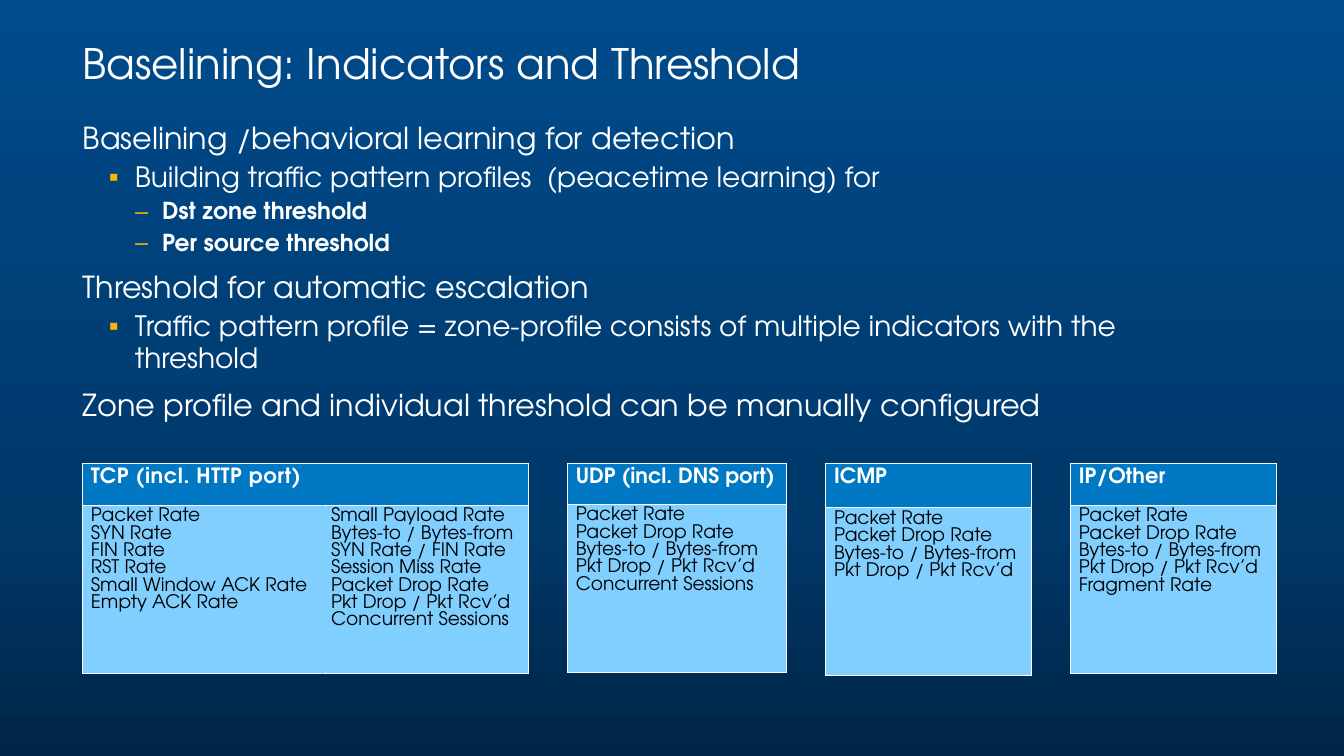
from copy import deepcopy
from lxml.etree import SubElement
from pptx import Presentation
from pptx.dml.color import RGBColor
from pptx.enum.shapes import MSO_SHAPE
from pptx.enum.text import MSO_ANCHOR
from pptx.oxml.ns import qn
from pptx.util import Cm, Pt

FONT = "TeX Gyre Adventor"
HUE = {"text": "FFFFFF", "ink": "000000", "head": "0078C3", "cell": "81CFFF", "mark": "FAB900"}
SKY = [(0, "004B8C"), (0.7, "003869"), (1, "002546")]
TITLE = "Baselining: Indicators and Threshold"
BODY = [
    (0, "Baselining /behavioral learning for detection"),
    (1, "Building traffic pattern profiles  (peacetime learning) for"),
    (2, "Dst zone threshold"),
    (2, "Per source threshold"),
    (0, "Threshold for automatic escalation"),
    (1, "Traffic pattern profile = zone-profile consists of multiple indicators with the threshold"),
    (0, "Zone profile and individual threshold can be manually configured"),
]
LEVELS = [
    {"size": 26, "before": 12, "left": 0.32},
    {"size": 24, "before": 5, "left": 1.9, "hang": 0.79, "mark": "▪"},
    {"size": 20, "before": 4, "left": 2.72, "hang": 0.81, "mark": "–", "bold": True},
]
TABLES = [
    {"head": "TCP (incl. HTTP port)", "high": 1.27, "wide": [7.26, 6.22], "track": 50, "cols": [
        ["Packet Rate", "SYN Rate", "FIN Rate", "RST Rate", "Small Window ACK Rate",
         "Empty ACK Rate"],
        ["Small Payload Rate", "Bytes-to / Bytes-from", "SYN Rate / FIN Rate",
         "Session Miss Rate", "Packet Drop Rate", "Pkt Drop / Pkt Rcv’d",
         "Concurrent Sessions"]]},
    {"head": "UDP (incl. DNS port)", "high": 1.24, "wide": [6.63], "cols": [
        ["Packet Rate", "Packet Drop Rate", "Bytes-to / Bytes-from",
         "Pkt Drop / Pkt Rcv’d", "Concurrent Sessions"]]},
    {"head": "ICMP", "high": 1.35, "wide": [6.22], "cols": [
        ["Packet Rate", "Packet Drop Rate", "Bytes-to / Bytes-from",
         "Pkt Drop / Pkt Rcv’d"]]},
    {"head": "IP/Other", "high": 1.27, "wide": [6.22], "cols": [
        ["Packet Rate", "Packet Drop Rate", "Bytes-to / Bytes-from",
         "Pkt Drop / Pkt Rcv’d", "Fragment Rate"]]},
]
WIDE, HIGH = 40.64, 22.86
LEFT, TOP, GAP, DEEP = 2.5, 14.01, 1.18, 5.08


def write(frame, text, new=False, size=16, color="text", bold=False, space=0.95,
          before=0, after=0, left=0, hang=0, mark=None, track=0):
    par = frame.add_paragraph() if new else frame.paragraphs[0]
    par.line_spacing, par.space_before, par.space_after = space, Pt(before), Pt(after)
    run = par.add_run()
    run.text = text
    run.font.name, run.font.size, run.font.bold = FONT, Pt(size), bold
    run.font.color.rgb = RGBColor.from_string(HUE[color])
    if track:
        run.font._element.set("spc", str(track))
    props = par._p.get_or_add_pPr()
    props.set("marL", str(Cm(left)))
    props.set("indent", str(-Cm(hang)))
    if mark:
        tint = SubElement(props, qn("a:buClr"))
        SubElement(tint, qn("a:srgbClr"), val=HUE["mark"])
        SubElement(props, qn("a:buFont"), typeface="Arial")
        SubElement(props, qn("a:buChar"), char=mark)


def box(slide, *place):
    frame = slide.shapes.add_textbox(*map(Cm, place)).text_frame
    frame.word_wrap = True
    frame.margin_left = frame.margin_right = frame.margin_top = frame.margin_bottom = 0
    return frame


def style(cell, fill, pad, soft=""):
    cell.margin_left = cell.margin_right = Cm(0.25)
    cell.margin_top = cell.margin_bottom = Cm(pad)
    props = cell._tc.get_or_add_tcPr()
    for side in "LRTB":
        line = SubElement(props, qn("a:ln" + side), w=str(Pt(1)))
        paint = SubElement(line, qn("a:solidFill"))
        SubElement(paint, qn("a:srgbClr"), val=HUE["cell" if side == soft else "text"])
    cell.fill.solid()
    cell.fill.fore_color.rgb = RGBColor.from_string(HUE[fill])


def grid(slide, left, data):
    wide, cols = data["wide"], data["cols"]
    table = slide.shapes.add_table(2, len(cols), Cm(left), Cm(TOP), Cm(sum(wide)),
                                   Cm(data["high"] + DEEP)).table
    table.first_row = table.horz_banding = False
    table.rows[0].height, table.rows[1].height = Cm(data["high"]), Cm(DEEP)
    for col, lines in enumerate(cols):
        table.columns[col].width = Cm(wide[col])
        style(table.cell(0, col), "head", 0.15)
        cell = table.cell(1, col)
        style(cell, "cell", 0.08, "RL"[col] if len(cols) > 1 else "")
        for row, text in enumerate(lines):
            write(cell.text_frame, text, new=row > 0, color="ink", space=1.0)
    if len(cols) > 1:
        table.cell(0, 0).merge(table.cell(0, len(cols) - 1))
    write(table.cell(0, 0).text_frame, data["head"], size=18, bold=True, space=1.0,
          track=data.get("track", 0))


def paint(slide):
    sky = slide.shapes.add_shape(MSO_SHAPE.RECTANGLE, 0, 0, Cm(WIDE), Cm(HIGH))
    sky.shadow.inherit = False
    sky.line.fill.background()
    fill = sky.fill
    fill.gradient()
    fill.gradient_angle = 270
    first = fill.gradient_stops[0]._gs
    first.addnext(deepcopy(first))
    for stop, (spot, tone) in zip(fill.gradient_stops, SKY):
        stop.position = spot
        stop.color.rgb = RGBColor.from_string(tone)


def main():
    """Build the slide on baselining indicators and thresholds."""
    deck = Presentation()
    deck.slide_width, deck.slide_height = Cm(WIDE), Cm(HIGH)
    slide = deck.slides.add_slide(deck.slide_layouts[6])
    paint(slide)
    body = box(slide, 2.18, 3.68, 34.34, 17.25)
    for row, (level, text) in enumerate(BODY):
        write(body, text, new=row > 0, **LEVELS[level])
    title = box(slide, LEFT, 0.66, 34.34, 2.03)
    title.vertical_anchor = MSO_ANCHOR.BOTTOM
    write(title, TITLE, size=36, after=2)
    left = LEFT
    for data in TABLES:
        grid(slide, left, data)
        left += sum(data["wide"]) + GAP
    deck.save("out.pptx")


if __name__ == "__main__":
    main()
